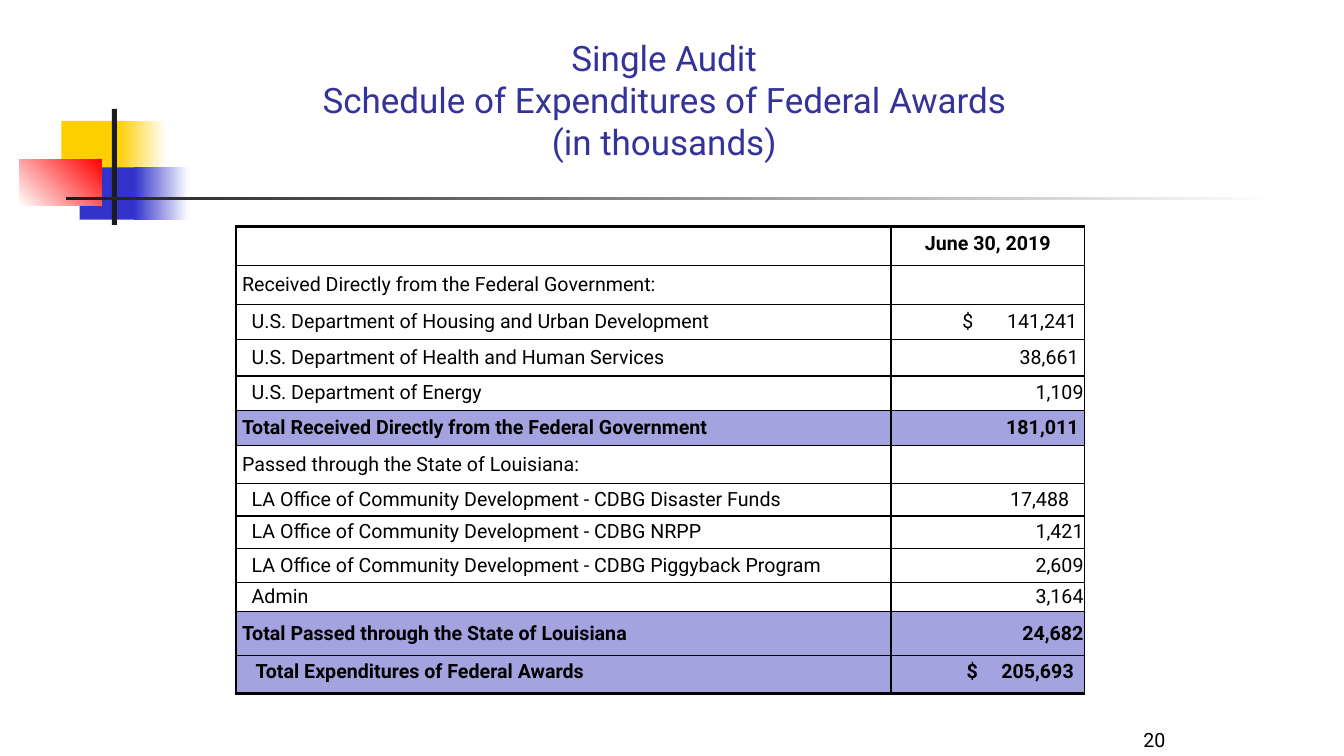
"""Build the schedule of federal award expenditures slide."""
from lxml.etree import SubElement
from pptx import Presentation
from pptx.dml.color import RGBColor
from pptx.enum.shapes import MSO_SHAPE
from pptx.enum.text import MSO_ANCHOR, PP_ALIGN
from pptx.oxml import parse_xml
from pptx.oxml.ns import nsdecls, qn
from pptx.util import Pt

THEME = {
    "font": "Roboto", "title": "333399", "text": "000000", "band": "A3A3E0",
    "gold": "FFCF01", "blue": "3333CC", "red": "FF0000", "dark": "1C1C1C",
    "white": "FFFFFF", "title_size": 25, "body_size": 14,
    "thin": 1, "thick": 2.25,
}

TITLE = "Single Audit\nSchedule of Expenditures of Federal Awards\n(in thousands)"
PAGE = "20"

DECOR = [
    ((43.9, 86.4, 46.1, 37.4), ("gold",), 0),
    ((84.2, 86.4, 34.6, 37.4), ("gold", "white"), 0),
    ((56.9, 119.5, 43.9, 37.4), ("blue",), 0),
    ((95.8, 119.5, 38.9, 37.4), ("blue", "white"), 0),
    ((13.7, 113.8, 59, 33.1), ("white", "red"), 45),
    ((79.9, 77.8, 3.6, 82.8), ("dark",), 0),
    ((46.8, 140.4, 863.3, 2.5), ("dark", "white"), 0),
]

TABLE_AT = (168.5, 162, 606.2, 333.4)
COL_WIDTHS = (468, 138.2)
HEAD, ITEM, GRAND = 4.4, 11.3, 14.2
EDGE, ONE, THREE = 0.7, 4.2, 11
# PLACEHOLDER
ROWS = [
    (27.4, "", 0, "June 30, 2019", 7.2),
    (28.1, "Received Directly from the Federal Government:", HEAD, "", 0),
    (25.2, "U.S. Department of Housing and Urban Development", ITEM, "$\t141,241", ONE),
    (25.9, "U.S. Department of Health and Human Services", ITEM, "38,661", ONE),
    (24.5, "U.S. Department of Energy", ITEM, "1,109", EDGE),
    (25.2, "Total Received Directly from the Federal Government", HEAD, "181,011", ONE),
    (27.4, "Passed through the State of Louisiana:", HEAD, "", 0),
    (23, "LA Office of Community Development - CDBG Disaster Funds", ITEM, "17,488", THREE),
    (23, "LA Office of Community Development - CDBG NRPP", ITEM, "1,421", EDGE),
    (24.5, "LA Office of Community Development - CDBG Piggyback Program", ITEM, "2,609", EDGE),
    (20.9, "Admin", ITEM, "3,164", EDGE),
    (31, "Total Passed through the State of Louisiana", HEAD, "24,682", EDGE),
    (27.4, "Total Expenditures of Federal Awards", GRAND, "$\t205,693", 7.2),
]
TOP_ROWS = (0, len(ROWS) - 1)
DOLLAR_TABS = {2: (51, 82), len(ROWS) - 1: (54, 76.6)}


def color(name):
    return RGBColor.from_string(THEME[name])


def write(tf, text, size="body_size", ink="text", bold=False, align=PP_ALIGN.LEFT):
    p = tf.paragraphs[0]
    p.alignment = align
    for i, line in enumerate(text.split("\n")):
        if i:
            p.add_line_break()
        r = p.add_run()
        r.text = line
        r.font.name = THEME["font"]
        r.font.size = Pt(THEME[size])
        r.font.bold = bold
        r.font.color.rgb = color(ink)
    return p


def add_text(s, at, text, **fmt):
    tf = s.shapes.add_textbox(*map(Pt, at)).text_frame
    tf.word_wrap = True
    tf.vertical_anchor = MSO_ANCHOR.BOTTOM
    write(tf, text, **fmt)


def add_block(s, at, inks, angle):
    sp = s.shapes.add_shape(MSO_SHAPE.RECTANGLE, *map(Pt, at))
    sp.shadow.inherit = False
    sp.line.fill.background()
    if len(inks) == 1:
        sp.fill.solid()
        sp.fill.fore_color.rgb = color(inks[0])
        return
    sp.fill.gradient()
    sp.fill.gradient_angle = angle
    for stop, ink in zip(sp.fill.gradient_stops, inks):
        stop.color.rgb = color(ink)


def set_borders(cell, row, col):
    heavy = {"L": col == 0, "R": False, "T": row == 0, "B": row == len(ROWS) - 1}
    tcPr = cell._tc.get_or_add_tcPr()
    for i, (side, thick) in enumerate(heavy.items()):
        width = Pt(THEME["thick" if thick else "thin"])
        tcPr.insert(i, parse_xml(
            f'<a:ln{side} {nsdecls("a")} w="{width}"><a:solidFill>'
            f'<a:srgbClr val="{THEME["text"]}"/></a:solidFill></a:ln{side}>'))


def set_cell(cell, row, col, text, inset):
    total = ROWS[row][1].startswith("Total")
    outer = row in TOP_ROWS
    cell.margin_left = Pt(inset if col == 0 else EDGE)
    cell.margin_right = Pt(inset if col else EDGE)
    cell.margin_top = cell.margin_bottom = Pt(3.6 if outer and text else 0.4)
    cell.vertical_anchor = MSO_ANCHOR.TOP if outer else MSO_ANCHOR.MIDDLE
    if total:
        cell.fill.solid()
        cell.fill.fore_color.rgb = color("band")
    else:
        cell.fill.background()
    set_borders(cell, row, col)
    tabbed = "\t" in text
    align = PP_ALIGN.RIGHT if col and not tabbed else PP_ALIGN.LEFT
    if row == 0:
        align = PP_ALIGN.CENTER
        cell.margin_left = cell.margin_right
    p = write(cell.text_frame, text, bold=total or row == 0, align=align)
    if tabbed:
        left, stop = DOLLAR_TABS[row]
        cell.margin_left = Pt(left)
        tabs = SubElement(p._p.get_or_add_pPr(), qn("a:tabLst"))
        SubElement(tabs, qn("a:tab"), pos=str(Pt(stop)), algn="r")


def add_schedule(s):
    table = s.shapes.add_table(len(ROWS), len(COL_WIDTHS), *map(Pt, TABLE_AT)).table
    table.first_row = table.horz_banding = False
    for column, width in zip(table.columns, COL_WIDTHS):
        column.width = Pt(width)
    for i, (height, label, indent, amount, inset) in enumerate(ROWS):
        table.rows[i].height = Pt(height)
        set_cell(table.cell(i, 0), i, 0, label, indent)
        set_cell(table.cell(i, 1), i, 1, amount, inset)


def main():
    prs = Presentation()
    prs.slide_width, prs.slide_height = Pt(960), Pt(540)
    s = prs.slides.add_slide(prs.slide_layouts[6])
    for at, inks, angle in DECOR:
        add_block(s, at, inks, angle)
    add_text(s, (174.2, 16.6, 600.5, 103), TITLE, size="title_size", ink="title",
             align=PP_ALIGN.CENTER)
    add_schedule(s)
    add_text(s, (689.8, 504, 149.8, 36), PAGE, align=PP_ALIGN.RIGHT)
    prs.save("out.pptx")


if __name__ == "__main__":
    main()
